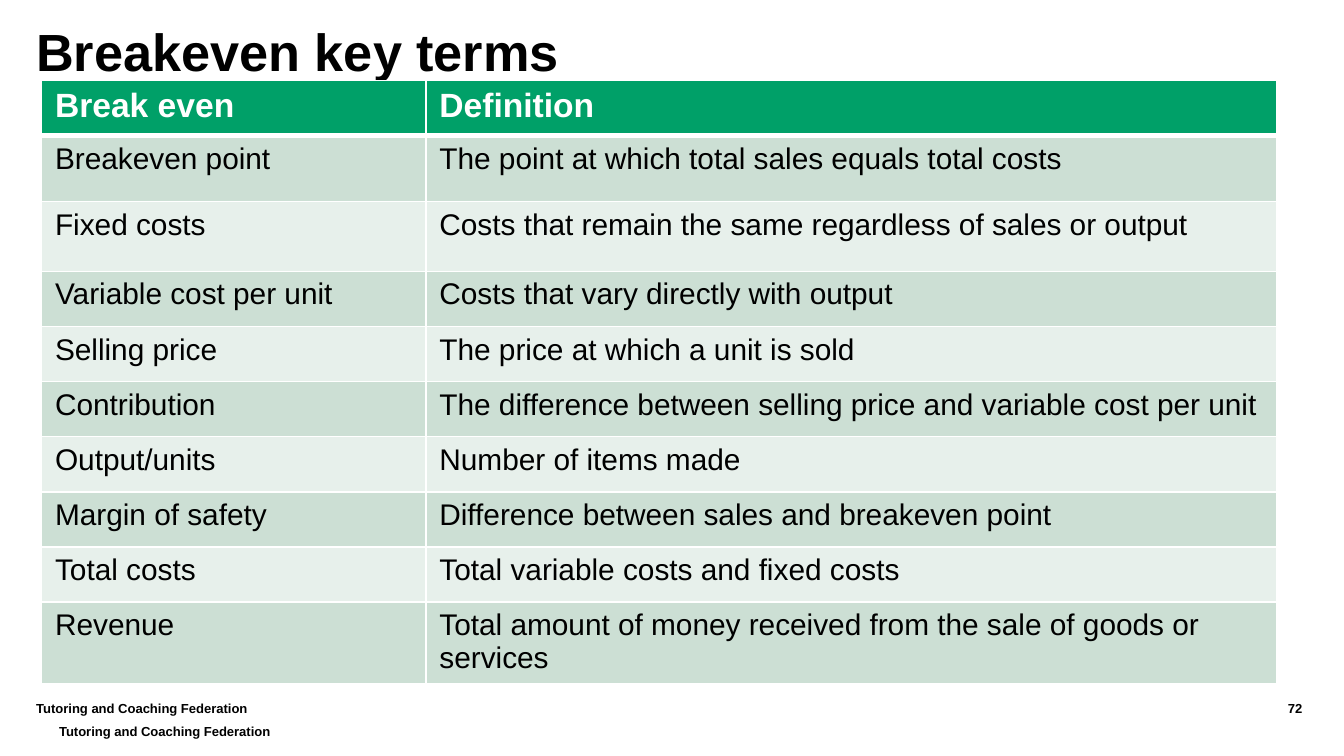
import pptx
import pptx.util
import pptx.dml.color
import pptx.enum.text
import pptx.oxml.ns
import lxml.etree

Inches = pptx.util.Inches
Pt = pptx.util.Pt
RGB = pptx.dml.color.RGBColor
Align = pptx.enum.text.PP_ALIGN

BLACK = RGB(0x00, 0x00, 0x00)
WHITE = RGB(0xFF, 0xFF, 0xFF)
GREEN = RGB(0x00, 0xA0, 0x68)
BANDS = (RGB(0xCC, 0xDF, 0xD4), RGB(0xE7, 0xF0, 0xEB))

OWNER = "Tutoring and Coaching Federation"
TERMS = [
    ("Break even", "Definition"),
    ("Breakeven point", "The point at which total sales equals total costs"),
    ("Fixed costs", "Costs that remain the same regardless of sales or output"),
    ("Variable cost per unit", "Costs that vary directly with output"),
    ("Selling price", "The price at which a unit is sold"),
    ("Contribution", "The difference between selling price and variable cost per unit"),
    ("Output/units", "Number of items made"),
    ("Margin of safety", "Difference between sales and breakeven point"),
    ("Total costs", "Total variable costs and fixed costs"),
    ("Revenue", "Total amount of money received from the sale of goods or services"),
]
WIDTHS = (2.86, 6.33)
HEIGHTS = (0.41, 0.49, 0.52) + (0.41,) * 6 + (0.61,)


class Deck:
    """Holds the style and the current slide."""

    font = "Arial"

    def __init__(self, show):
        self.slide = show.slides.add_slide(show.slide_layouts[5])

    def style(self, para, size, color=BLACK, bold=False, align=Align.LEFT):
        para.alignment = align
        para.font.name = self.font
        para.font.size = Pt(size)
        para.font.bold = bold
        para.font.color.rgb = color

    def frame(self, shape, text):
        frame = shape.text_frame
        frame.word_wrap = True
        frame.auto_size = pptx.enum.text.MSO_AUTO_SIZE.NONE
        frame.vertical_anchor = pptx.enum.text.MSO_ANCHOR.TOP
        frame.margin_left = frame.margin_right = 0
        frame.margin_top = frame.margin_bottom = 0
        frame.text = text
        return frame.paragraphs[0]

    def title(self, text, left, top, width, height):
        shape = self.slide.shapes.title
        shape.left, shape.top = Inches(left), Inches(top)
        shape.width, shape.height = Inches(width), Inches(height)
        para = self.frame(shape, text)
        self.style(para, 28, bold=True)
        para.line_spacing = 1.2

    def note(self, text, left, top, width, align=Align.LEFT):
        box = self.slide.shapes.add_textbox(
            Inches(left), Inches(top), Inches(width), Inches(0.3))
        self.style(self.frame(box, text), 7, bold=True, align=align)

    def border(self, cell, side, width):
        qn = pptx.oxml.ns.qn
        props = cell._tc.get_or_add_tcPr()
        line = lxml.etree.SubElement(props, qn("a:ln" + side), w=str(Pt(width)))
        fill = lxml.etree.SubElement(line, qn("a:solidFill"))
        lxml.etree.SubElement(fill, qn("a:srgbClr"), val=str(WHITE))

    def table(self, rows, left, top, widths, heights):
        grid = self.slide.shapes.add_table(
            len(rows), len(widths), Inches(left), Inches(top),
            Inches(sum(widths)), Inches(sum(heights))).table
        for col, width in zip(grid.columns, widths):
            col.width = Inches(width)
        for r, texts in enumerate(rows):
            grid.rows[r].height = Inches(heights[r])
            head = r == 0
            for c, text in enumerate(texts):
                cell = grid.cell(r, c)
                cell.text = text
                self.style(cell.text_frame.paragraphs[0], 18 if head else 16,
                           WHITE if head else BLACK, head)
                # The rule under the header is thicker
                for side in "LRTB":
                    thick = (r, side) in ((0, "B"), (1, "T"))
                    self.border(cell, side, 3 if thick else 1)
                cell.fill.solid()
                cell.fill.fore_color.rgb = GREEN if head else BANDS[(r - 1) % 2]


def main():
    # Widescreen, 16 to 9
    show = pptx.Presentation()
    show.slide_width, show.slide_height = Inches(10), Inches(10 * 9 / 16)
    deck = Deck(show)

    # Title
    deck.title("Breakeven key terms", 0.27, 0.05, 9.21, 0.74)

    # Footer and page number
    deck.note(OWNER, 0.27, 5.21, 8.43)
    deck.note("72", 8.7, 5.21, 0.99, Align.RIGHT)

    # Key terms
    deck.table(TERMS, 0.31, 0.6, WIDTHS, HEIGHTS)

    # Second footer
    deck.note(OWNER, 0.44, 5.38, 8.43)

    show.save("out.pptx")


if __name__ == "__main__":
    main()
